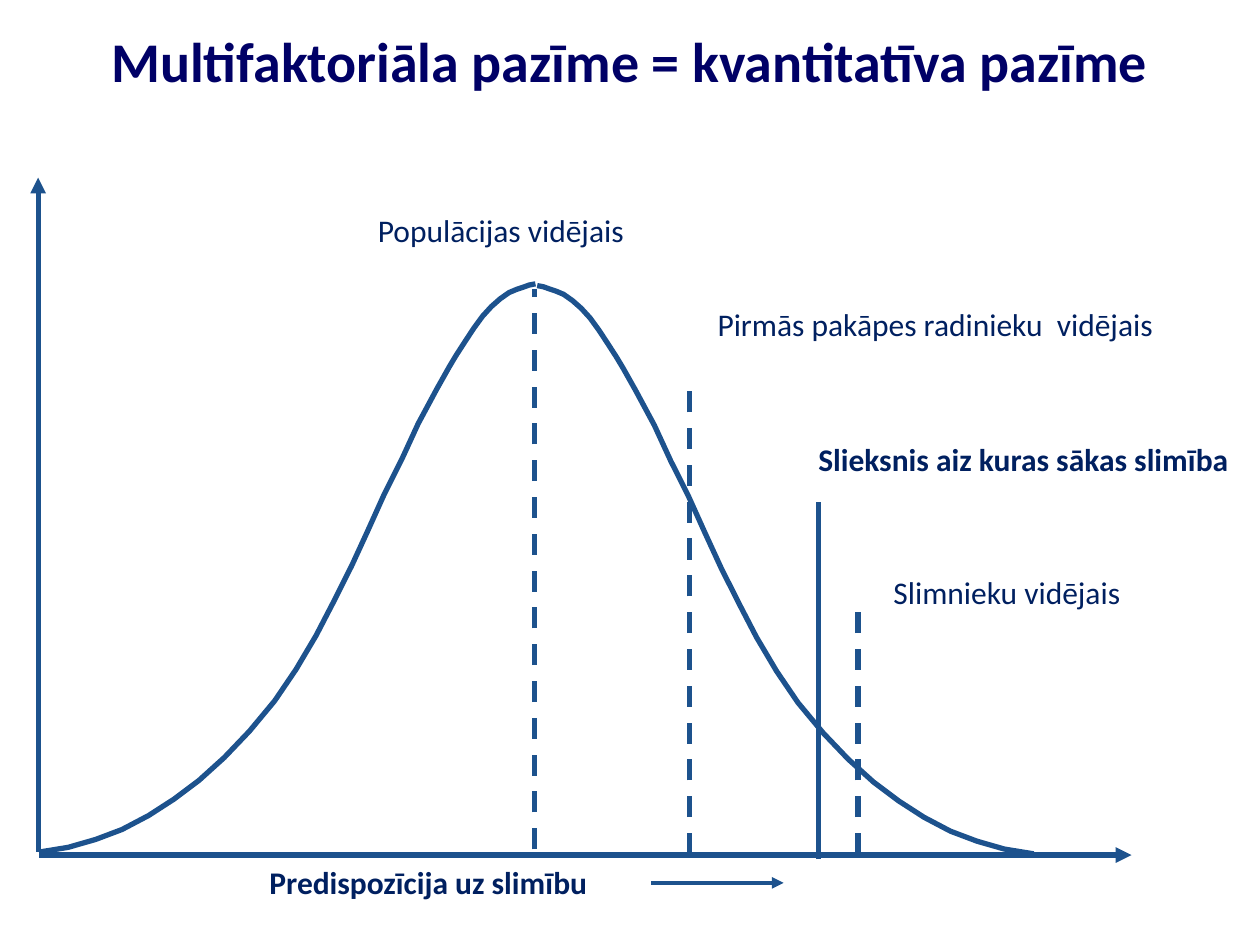
"""Build a slide with a bell curve of disease predisposition and its threshold."""
import pptx
import pptx.dml.color
import pptx.enum.dml
import pptx.enum.shapes
import pptx.enum.text
import pptx.oxml
import pptx.oxml.ns
import pptx.util

Pt = pptx.util.Pt
ALIGN = pptx.enum.text.PP_ALIGN
ANCHOR = pptx.enum.text.MSO_ANCHOR
FIT = pptx.enum.text.MSO_AUTO_SIZE
BLUE = pptx.dml.color.RGBColor(0x1D, 0x52, 0x8D)
NAVY = pptx.dml.color.RGBColor(0x00, 0x20, 0x60)
TITLE_BLUE = pptx.dml.color.RGBColor(0x00, 0x00, 0x66)

presentation = pptx.Presentation()
presentation.slide_width = Pt(720)
presentation.slide_height = Pt(540)
slide = presentation.slides.add_slide(presentation.slide_layouts[6])


def add_line(start, end, width=3, arrow=False, dashed=False):
    line = slide.shapes.add_connector(
        pptx.enum.shapes.MSO_CONNECTOR.STRAIGHT, *map(Pt, start + end))
    line.line.color.rgb = BLUE
    line.line.width = Pt(width)
    if dashed:
        line.line.dash_style = pptx.enum.dml.MSO_LINE.DASH
    if arrow:
        tail = pptx.oxml.parse_xml(
            f'<a:tailEnd {pptx.oxml.ns.nsdecls("a")} type="triangle"/>')
        line.line._get_or_add_ln().append(tail)
    effects = pptx.oxml.parse_xml(f'<a:effectLst {pptx.oxml.ns.nsdecls("a")}/>')
    line._element.spPr.append(effects)


def add_text(text, box, size=18, color=NAVY, bold=False, alignment=ALIGN.RIGHT,
             anchor=ANCHOR.MIDDLE, spacing=0.85, wrap=True, fit=FIT.SHAPE_TO_FIT_TEXT):
    frame = slide.shapes.add_textbox(*map(Pt, box)).text_frame
    frame.word_wrap = wrap
    frame.auto_size = fit
    frame.vertical_anchor = anchor
    paragraph = frame.paragraphs[0]
    paragraph.text = text
    paragraph.alignment = alignment
    paragraph.line_spacing = spacing
    paragraph.font.name = "Calibri"
    paragraph.font.size = Pt(size)
    paragraph.font.bold = bold
    paragraph.font.color.rgb = color


half_curve = [
    (0, 0), (3.6, 0.7), (7.2, 2), (10.8, 3.2), (15.1, 5), (20.2, 8.6),
    (25.2, 13), (30.2, 18.5), (35.3, 25.5), (40.3, 33.1), (45.4, 41),
    (49, 47), (56.2, 59.8), (67, 79.9), (76.3, 100.1), (86.4, 120.2),
    (95.8, 141.1), (105.1, 161.3), (115.2, 181.4), (125.3, 200.9),
    (136.8, 220.3), (149, 238.3), (163.4, 255.6), (177.8, 270.7),
    (192.2, 283.7), (206.6, 294.5), (221, 303.8), (236.2, 311.8),
    (251.3, 317.5), (267, 322), (283.7, 324.7),
]
for direction, peak_x, peak_y in [(-1, 306, 162.2), (1, 307, 163.2)]:
    points = [(Pt(peak_x + direction * offset), Pt(peak_y + drop))
              for offset, drop in half_curve]
    builder = slide.shapes.build_freeform(*points[0], scale=1)
    builder.add_line_segments(points[1:], close=False)
    curve = builder.convert_to_shape()
    curve.shadow.inherit = False
    curve.fill.background()
    curve.line.color.rgb = BLUE
    curve.line.width = Pt(3)

add_line((21.8, 486.7), (21.8, 101.5), arrow=True)
add_line((22.3, 488.6), (646.6, 488.6), arrow=True)
add_line((372.2, 504.5), (447.8, 504.5), width=2.25, arrow=True)
add_line((467.8, 491), (467.8, 287))
for x, bottom, top in [(305.4, 485.3, 165), (490.3, 488, 349.5), (394, 488, 219)]:
    add_line((x, bottom), (x, top), dashed=True)

add_text("Multifaktoriāla pazīme = kvantitatīva pazīme", (36, 12.2, 648, 44.6),
         size=32, color=TITLE_BLUE, bold=True, alignment=ALIGN.CENTER,
         spacing=1.0, fit=FIT.NONE)
for text, box in [
    ("Populācijas vidējais", (172.8, 120.2, 190.8, 26)),
    ("Pirmās pakāpes radinieku  vidējais", (365.8, 173.5, 300.2, 26)),
    ("Slimnieku vidējais", (456.5, 326.9, 190.8, 26)),
]:
    add_text(text, box)
add_text("Predispozīcija uz slimību", (139, 492.5, 203.8, 26), bold=True, wrap=False)
add_text("Slieksnis aiz kuras sākas slimība", (450.7, 247.7, 258.5, 29),
         bold=True, wrap=False, anchor=ANCHOR.TOP, spacing=1.0)

presentation.save("out.pptx")
